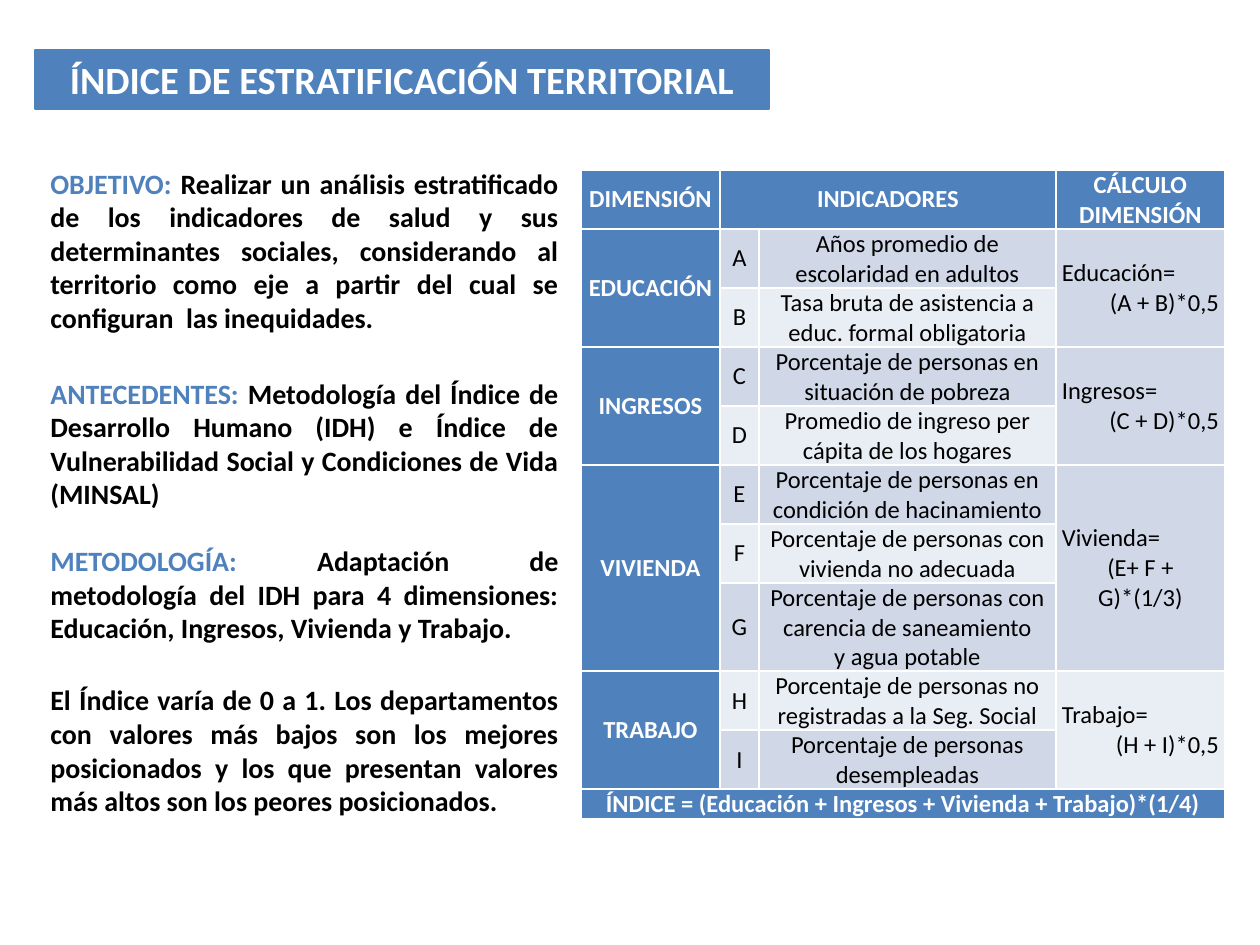
from pptx import Presentation
from pptx.dml.color import RGBColor
from pptx.enum.text import MSO_ANCHOR, MSO_AUTO_SIZE, PP_ALIGN
from pptx.util import Emu, Pt

FONT = "Calibri"
BLUE = RGBColor(0x4F, 0x81, 0xBD)
BAND_DARK = RGBColor(0xD0, 0xD8, 0xE8)
BAND_LIGHT = RGBColor(0xE9, 0xED, 0xF4)
WHITE = RGBColor(0xFF, 0xFF, 0xFF)
BLACK = RGBColor(0, 0, 0)
LEFT, CENTER, RIGHT = PP_ALIGN.LEFT, PP_ALIGN.CENTER, PP_ALIGN.RIGHT
JUSTIFY = PP_ALIGN.JUSTIFY
MIDDLE = MSO_ANCHOR.MIDDLE
NO_AUTOFIT = MSO_AUTO_SIZE.NONE
TITLE_ONLY = 5

TITLE = "ÍNDICE DE ESTRATIFICACIÓN TERRITORIAL"
# Space before in points, blue lead-in, body
SECTIONS = [
    (0, "OBJETIVO: ", "Realizar un análisis estratificado de los indicadores de salud "
     "y sus determinantes sociales, considerando al territorio como eje a partir del "
     "cual se configuran  las inequidades."),
    (24, "ANTECEDENTES: ", "Metodología del Índice de Desarrollo Humano (IDH) e Índice "
     "de Vulnerabilidad Social y Condiciones de Vida (MINSAL)"),
    (19, "METODOLOGÍA: ", "Adaptación de metodología del IDH para 4 dimensiones: "
     "Educación, Ingresos, Vivienda y Trabajo."),
    (22, "", "El Índice varía de 0 a 1. Los departamentos con valores más bajos son los "
     "mejores posicionados y los que presentan valores más altos son los peores "
     "posicionados."),
]
DIMENSIONS = [
    ("Educación", "(A + B)*0,5", RIGHT, [
        "Años promedio de escolaridad en adultos",
        "Tasa bruta de asistencia a educ. formal obligatoria"]),
    ("Ingresos", "(C + D)*0,5", RIGHT, [
        "Porcentaje de personas en situación de pobreza",
        "Promedio de ingreso per cápita de los hogares"]),
    ("Vivienda", "(E+ F +\vG)*(1/3)", CENTER, [
        "Porcentaje de personas en condición de hacinamiento",
        "Porcentaje de personas con vivienda no adecuada",
        "Porcentaje de personas con carencia de saneamiento\vy agua potable"]),
    ("Trabajo", "(H + I)*0,5", RIGHT, [
        "Porcentaje de personas no registradas a la Seg. Social",
        "Porcentaje de personas desempleadas"]),
]
INDEX_FORMULA = "ÍNDICE = (Educación + Ingresos + Vivienda + Trabajo)*(1/4)"
COLUMN_WIDTHS = [139, 39, 297, 169]
ROW_HEIGHTS = [59] * 7 + [88, 59, 59, 30]


def px(length):
    return Emu(round(length * 914400 / 126))


class SlideBuilder:
    def __init__(self, deck):
        self.page = deck.slides.add_slide(deck.slide_layouts[TITLE_ONLY])

    def style(self, para, size, color, bold, align):
        para.alignment = align
        para.font.name = FONT
        para.font.size = Pt(size)
        para.font.bold = bold
        para.font.color.rgb = color

    def title(self, text, left, top, width, height):
        box = self.page.shapes.title
        box.left, box.top, box.width, box.height = map(px, (left, top, width, height))
        box.fill.solid()
        box.fill.fore_color.rgb = BLUE
        box.line.color.rgb = BLUE
        box.line.width = Pt(0.75)
        frame = box.text_frame
        frame.text = text
        frame.auto_size = NO_AUTOFIT
        frame.vertical_anchor = MIDDLE
        self.style(frame.paragraphs[0], 22, WHITE, True, CENTER)

    def sections(self, sections, left, top, width, height):
        box = self.page.shapes.add_textbox(*map(px, (left, top, width, height)))
        frame = box.text_frame
        frame.word_wrap = True
        for number, (gap, lead, body) in enumerate(sections):
            para = frame.add_paragraph() if number else frame.paragraphs[0]
            self.style(para, 16, BLACK, True, JUSTIFY)
            para.space_before = Pt(gap)
            if lead:
                span = para.add_run()
                span.text = lead
                span.font.color.rgb = BLUE
            para.add_run().text = body

    def table(self, left, top, widths, heights):
        table = self.page.shapes.add_table(
            len(heights), len(widths), px(left), px(top),
            px(sum(widths)), px(sum(heights))).table
        for column, width in zip(table.columns, widths):
            column.width = px(width)
        for row, height in zip(table.rows, heights):
            row.height = px(height)
        return table

    def cell(self, cell, lines, fill, heading=False):
        """Fill a cell with (text, alignment) lines, one paragraph each."""
        cell.fill.solid()
        cell.fill.fore_color.rgb = fill
        cell.vertical_anchor = MIDDLE
        cell.margin_left = cell.margin_right = px(6)
        cell.margin_top = cell.margin_bottom = 0
        frame = cell.text_frame
        frame.text = "\n".join(text for text, _ in lines)
        for para, (_, align) in zip(frame.paragraphs, lines):
            self.style(para, 14, WHITE if heading else BLACK, heading, align)

    def heading(self, cell, text):
        self.cell(cell, [(text, CENTER)], BLUE, heading=True)


def fill_index_table(slide, table):
    for column, text in ((0, "DIMENSIÓN"), (1, "INDICADORES"), (3, "CÁLCULO DIMENSIÓN")):
        slide.heading(table.cell(0, column), text)
    table.cell(0, 1).merge(table.cell(0, 2))

    row = 1
    for name, formula, align, indicators in DIMENSIONS:
        first, last = row, row + len(indicators) - 1
        for column in (0, 3):
            table.cell(first, column).merge(table.cell(last, column))
        slide.heading(table.cell(first, 0), name.upper())
        for indicator in indicators:
            band = BAND_DARK if row % 2 else BAND_LIGHT
            slide.cell(table.cell(row, 1), [("ABCDEFGHI"[row - 1], CENTER)], band)
            slide.cell(table.cell(row, 2), [(indicator, CENTER)], band)
            row += 1
        slide.cell(table.cell(first, 3), [(name + "=", LEFT), (formula, align)],
                   BAND_DARK if first % 2 else BAND_LIGHT)

    table.cell(row, 0).merge(table.cell(row, 3))
    slide.heading(table.cell(row, 0), INDEX_FORMULA)


def main():
    deck = Presentation()
    deck.slide_width, deck.slide_height = px(1260), px(945)
    slide = SlideBuilder(deck)
    slide.title(TITLE, 35, 50, 734, 59)
    slide.sections(SECTIONS, 38, 160, 533, 670)
    fill_index_table(slide, slide.table(581, 170, COLUMN_WIDTHS, ROW_HEIGHTS))
    deck.save("out.pptx")


if __name__ == "__main__":
    main()
